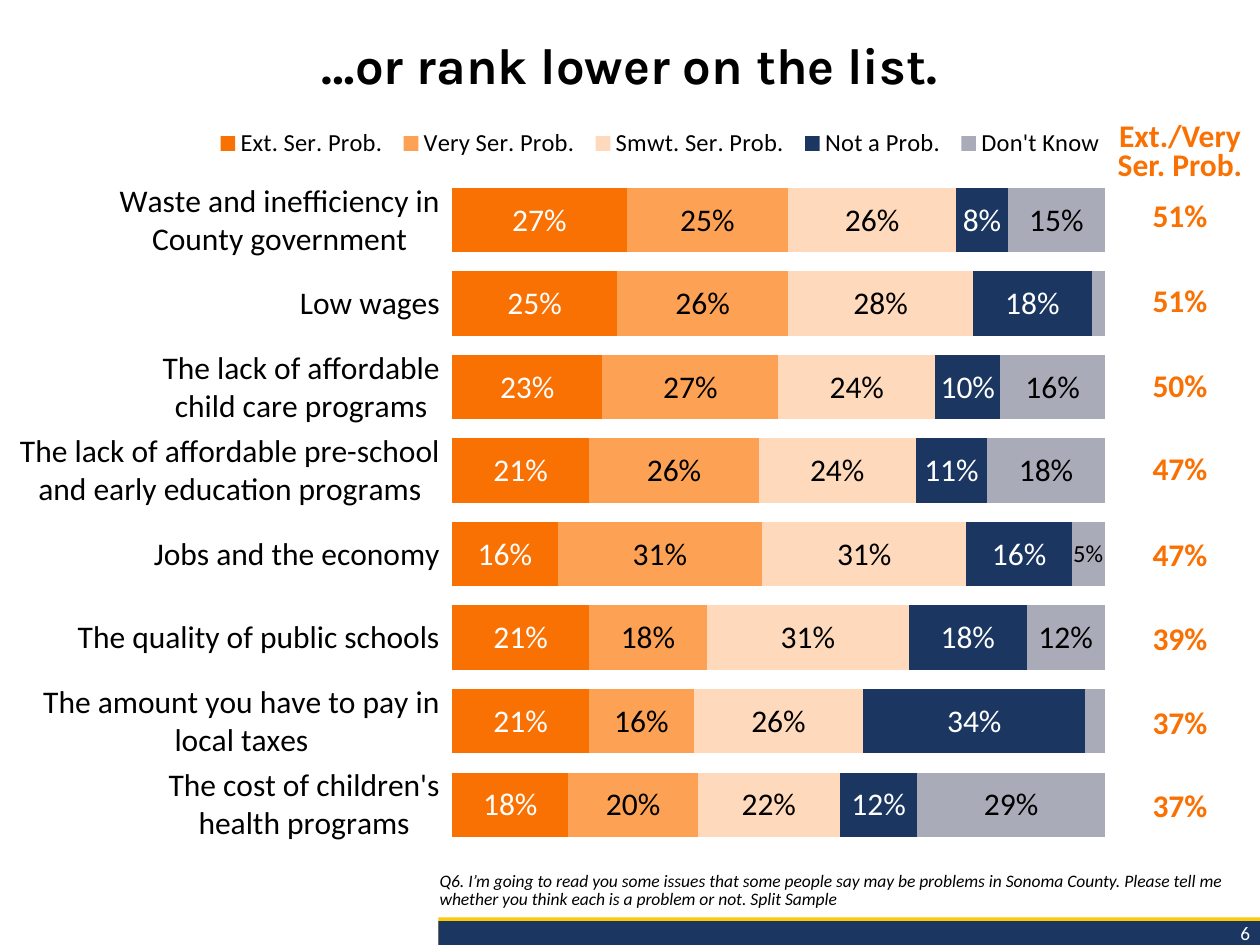
from lxml import etree
from pptx import Presentation
from pptx.chart.data import CategoryChartData
from pptx.dml.color import RGBColor
from pptx.enum.chart import XL_CHART_TYPE, XL_LEGEND_POSITION, XL_TICK_LABEL_POSITION, XL_TICK_MARK
from pptx.enum.shapes import MSO_SHAPE
from pptx.enum.text import MSO_ANCHOR, PP_ALIGN
from pptx.oxml.ns import qn
from pptx.util import Inches, Pt

BAR = XL_CHART_TYPE.BAR_STACKED_100
CENTER, RIGHT = PP_ALIGN.CENTER, PP_ALIGN.RIGHT
TOP, MIDDLE, BOTTOM = MSO_ANCHOR.TOP, MSO_ANCHOR.MIDDLE, MSO_ANCHOR.BOTTOM

COLORS = {
    "black": "000000", "white": "FFFFFF", "gold": "FCCA09", "footer": "1B3661",
    "extreme": "F97103", "very": "FDA155", "somewhat": "FED9BB",
    "not": "1B3660", "unknown": "A9ABB8",
}
CATEGORIES = [
    "Waste and inefficiency in\nCounty government",
    "Low wages",
    "The lack of affordable\nchild care programs",
    "The lack of affordable pre-school and early education programs",
    "Jobs and the economy",
    "The quality of public schools",
    "The amount you have to pay in local taxes",
    "The cost of children's\nhealth programs",
]
# name, fill, label colour, percentages
SERIES = [
    ("Ext. Ser. Prob.", "extreme", "white", [27, 25, 23, 21, 16, 21, 21, 18]),
    ("Very Ser. Prob.", "very", "black", [25, 26, 27, 26, 31, 18, 16, 20]),
    ("Smwt. Ser. Prob.", "somewhat", "black", [26, 28, 24, 24, 31, 31, 26, 22]),
    ("Not a Prob.", "not", "white", [8, 18, 10, 11, 16, 18, 34, 12]),
    ("Don't Know", "unknown", "black", [15, 2, 16, 18, 5, 12, 3, 29]),
]
MIN_LABELLED, MIN_FULL_SIZE = 5, 8
TOTALS = ["51%", "51%", "50%", "47%", "47%", "39%", "37%", "37%"]
ROW_HEIGHTS = [0.55, 0.4, 0.68, 0.67, 0.66, 0.68, 0.67, 0.67, 0.66]
QUESTION = ("Q6. I’m going to read you some issues that some people say may be problems "
            "in Sonoma County. Please tell me whether you think each is a problem or not. "
            "Split Sample")


def rgb(key):
    return RGBColor.from_string(COLORS[key])


def set_font(font, size, color="black", **values):
    values = {"name": "Calibri", "size": Pt(size), **values}
    for name, value in values.items():
        setattr(font, name, value)
    font.color.rgb = rgb(color)


def write(tf, text, size, color="black", align=None, spacing=None, **values):
    p = tf.paragraphs[0]
    for name, value in {"alignment": align, "line_spacing": spacing}.items():
        setattr(p, name, value)
    r = p.add_run()
    r.text = text
    set_font(r.font, size, color, **values)


def place(sp, box):
    for name, value in zip(("left", "top", "width", "height"), box):
        setattr(sp, name, Inches(value))


def add_title(slide, box):
    sp = slide.shapes.title
    place(sp, box)
    tf = sp.text_frame
    tf.vertical_anchor = MIDDLE
    write(tf, "…or rank lower on the list.", 29, align=CENTER, spacing=0.9,
          name="Karla", bold=True)


def add_text(slide, box, text, size, anchor=TOP, **values):
    tf = slide.shapes.add_textbox(*map(Inches, box)).text_frame
    tf.word_wrap = True
    tf.vertical_anchor = anchor
    write(tf, text, size, **values)


def add_footer(slide, box):
    x, y, w, h = box
    for color, offset in (("gold", 0), ("footer", 0.03)):
        sp = slide.shapes.add_shape(
            MSO_SHAPE.RECTANGLE, *map(Inches, (x, y + offset, w, h - offset)))
        sp.shadow.inherit = False
        sp.fill.solid()
        sp.fill.fore_color.rgb = rgb(color)
        sp.line.fill.background()
    add_text(slide, (x + w - 1.46, y - 0.02, 1.48, 0.29), "6", 11,
             color="white", align=RIGHT)


def set_layout(parent, index, box, inner=False):
    """Fix a chart part at box, given as fractions of the chart."""
    for old in parent.findall(qn("c:layout")):
        parent.remove(old)
    layout = etree.Element(qn("c:layout"))
    manual = etree.SubElement(layout, qn("c:manualLayout"))
    values = {"layoutTarget": "inner"} if inner else {}
    values |= {"xMode": "edge", "yMode": "edge", **dict(zip("xywh", box))}
    for tag, value in values.items():
        etree.SubElement(manual, qn(f"c:{tag}")).set("val", str(value))
    parent.insert(index, layout)


def delete_label(labels, index):
    for label in labels.findall(qn("c:dLbl")):
        idx = label.find(qn("c:idx"))
        if idx.get("val") == str(index):
            for child in list(label):
                if child is not idx:
                    label.remove(child)
            etree.SubElement(label, qn("c:delete")).set("val", "1")


def format_series(series, fill, label_color, values):
    series.format.fill.solid()
    series.format.fill.fore_color.rgb = rgb(fill)
    labels = series.data_labels
    labels.show_value = True
    labels.number_format = "0%"
    labels.number_format_is_linked = False
    set_font(labels.font, 18, label_color)
    for i, value in enumerate(values):
        if value < MIN_FULL_SIZE:
            set_font(series.points[i].data_label.font, 14, label_color)
        if value < MIN_LABELLED:
            delete_label(labels._element, i)


def add_problem_chart(slide, box):
    data = CategoryChartData(number_format="0%")
    data.categories = CATEGORIES
    for name, _, _, values in SERIES:
        data.add_series(name, [v / 100 for v in values])
    chart = slide.shapes.add_chart(BAR, *map(Inches, box), data).chart
    set_font(chart.font, 10)
    chart.has_title = False

    plot = chart.plots[0]
    plot.gap_width, plot.overlap, plot.vary_by_categories = 30, 100, False
    for series, (_, fill, label_color, values) in zip(plot.series, SERIES):
        format_series(series, fill, label_color, values)

    axis = chart.category_axis
    axis.reverse_order = True
    axis.major_tick_mark = axis.minor_tick_mark = XL_TICK_MARK.NONE
    axis.tick_label_position = XL_TICK_LABEL_POSITION.LOW
    axis.format.line.fill.background()
    set_font(axis.tick_labels.font, 18)
    chart.value_axis.has_major_gridlines = False
    chart.value_axis.visible = False

    chart.has_legend = True
    legend = chart.legend
    legend.position = XL_LEGEND_POSITION.TOP
    legend.include_in_layout = False
    set_font(legend.font, 14)
    set_layout(legend._element, 1, (0.18, 0.03, 0.81, 0.06))
    set_layout(plot._element.getparent(), 0, (0.399, 0.105, 0.584, 0.864), inner=True)


def add_totals(slide, box):
    table = slide.shapes.add_table(len(ROW_HEIGHTS), 1, *map(Inches, box)).table
    table.first_row = table.horz_banding = False
    margins = {"margin_left": 0.01, "margin_right": 0.01, "margin_top": 0.01, "margin_bottom": 0}
    texts = ["Ext./Very Ser. Prob."] + TOTALS
    for i, (text, height) in enumerate(zip(texts, ROW_HEIGHTS)):
        table.rows[i].height = Inches(height)
        cell = table.cell(i, 0)
        cell.fill.background()
        cell.vertical_anchor = BOTTOM
        for name, value in margins.items():
            setattr(cell, name, Inches(value))
        write(cell.text_frame, text, 18, "extreme", CENTER,
              Pt(17) if i == 0 else None, bold=True)


def main():
    prs = Presentation()
    prs.slide_width, prs.slide_height = Inches(10), Inches(7.5)
    slide = prs.slides.add_slide(prs.slide_layouts[5])
    add_footer(slide, (3.48, 7.28, 6.52, 0.22))
    add_text(slide, (3.39, 6.73, 6.59, 0.54), QUESTION, 10, BOTTOM,
             spacing=0.9, italic=True)
    add_problem_chart(slide, (0.05, 0.77, 8.87, 6.14))
    add_title(slide, (0, 0.23, 10, 0.62))
    add_totals(slide, (8.79, 0.92, 1.15, sum(ROW_HEIGHTS)))
    prs.save("out.pptx")


if __name__ == "__main__":
    main()
